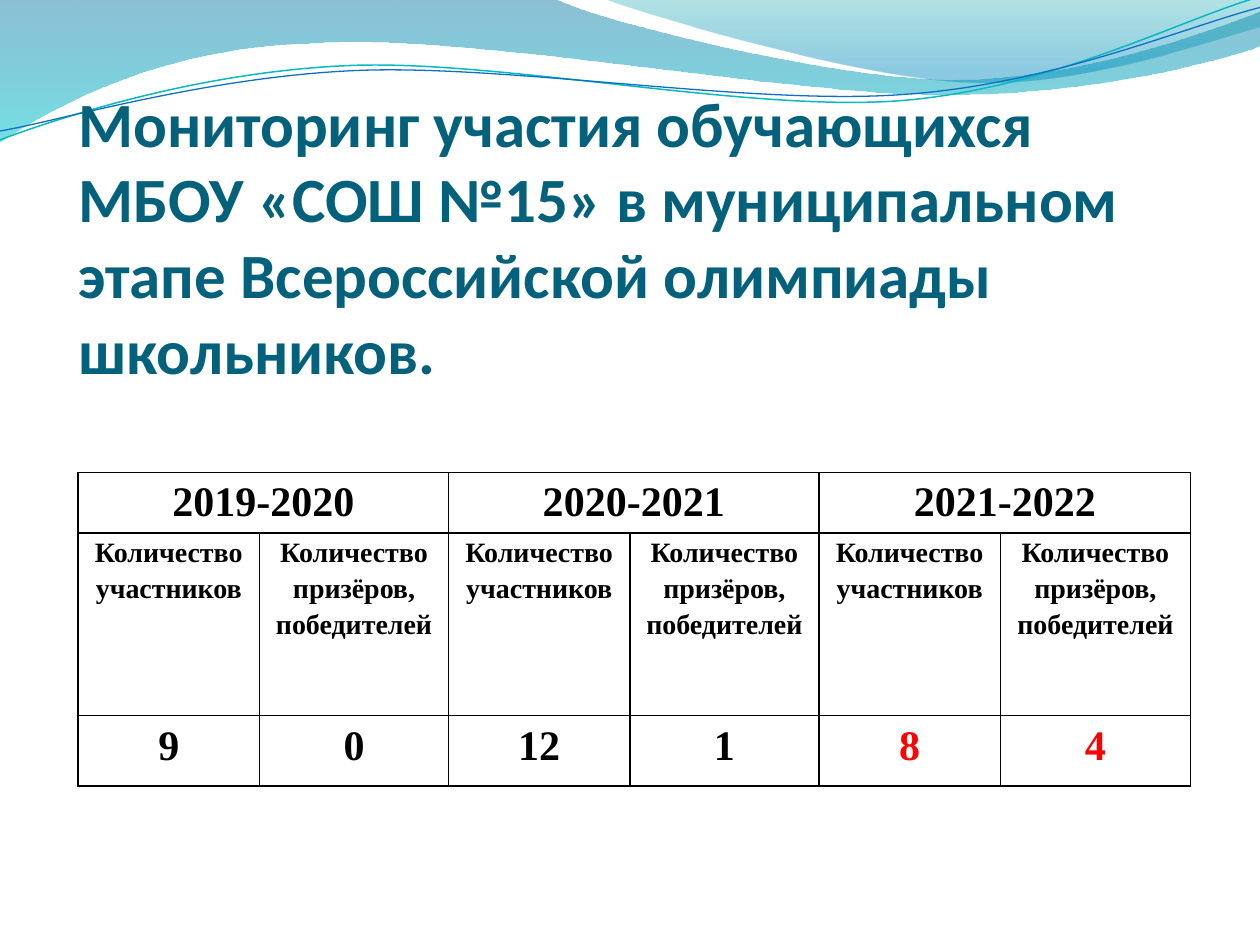
import math
import pptx
import pptx.util
import pptx.dml.color
import pptx.enum.text
import pptx.oxml.ns
import lxml.etree

Inches = pptx.util.Inches
qn = pptx.oxml.ns.qn
ALIGN = pptx.enum.text.PP_ALIGN
ANCHOR = pptx.enum.text.MSO_ANCHOR

COLORS = {"title": "04617B", "ink": "000000", "hot": "FF0000",
          "deep": "0074A1", "aqua": "00C6CF", "sea": "00A1A9",
          "sky": "008BBF", "teal": "0AB8BF", "blue": "0F6FC6"}
TITLE = ("Мониторинг участия обучающихся МБОУ «СОШ №15» в муниципальном "
         "этапе Всероссийской олимпиады школьников.")
HEADS = ("Количество участников", "Количество призёров, победителей")
YEARS = [("2019-2020", ("9", "0"), "ink"),
         ("2020-2021", ("12", "1"), "ink"),
         ("2021-2022", ("8", "4"), "hot")]
COLS = (1.44, 1.5, 1.44, 1.5, 1.44, 1.51)
ROWS = (0.48, 1.45, 0.56)
TILT = -2.7
BANDS = [
    {"path": [(0, 0), (4.4, -0.01),
              (4.76, 0.17, 6.64, 0.63, 7.58, 0.63),
              (8.53, 0.63, 9.58, 0.26, 10, 0.09), (10.01, 0.36),
              (9.83, 0.44, 8.7, 0.76, 7.46, 0.75),
              (6.22, 0.75, 3.82, 0.28, 2.57, 0.34),
              (1.29, 0.36, 0.46, 0.83, -0.01, 1.13), (0, 0)],
     "stops": [(0, "deep", 45), (1, "aqua", 55)]},
    {"path": [(4.79, -0.01),
              (5.09, 0.11, 6.82, 0.62, 7.69, 0.65),
              (8.56, 0.69, 9.61, 0.32, 10, 0.21), (10, 0), (4.79, -0.01)],
     "stops": [(0, "sea", 30), (0.8, "sky", 45)]},
]
WAVES = [
    {"path": [(0, 1.11), (0.48, 0.93, 1.58, 0.57, 2.77, 0.52),
              (3.95, 0.47, 5.93, 0.89, 7.13, 0.8),
              (8.33, 0.71, 9.38, 0.15, 9.98, -0.02)],
     "mid": (4.99, 0.58), "color": "teal", "width": 0.85},
    {"path": [(0, 1.04), (0.47, 0.96, 1.64, 0.61, 2.83, 0.56),
              (4.03, 0.51, 5.97, 0.84, 7.17, 0.75),
              (8.36, 0.67, 9.41, 0.21, 10, 0.06)],
     "mid": (5, 0.59), "color": "blue", "width": 0.75},
]


def shade(name):
    return pptx.dml.color.RGBColor.from_string(COLORS[name])


def write(frame, text, size, font="Times New Roman", color="ink",
          align=ALIGN.CENTER, space=1.15):
    para = frame.paragraphs[0]
    para.alignment = align
    para.line_spacing = space
    run = para.add_run()
    run.text = text
    run.font.size = pptx.util.Pt(size)
    run.font.name = font
    run.font.bold = True
    run.font.color.rgb = shade(color)


def turn(part, mid, angle):
    cos, sin = math.cos(math.radians(angle)), math.sin(math.radians(angle))
    out = []
    for x, y in zip(part[::2], part[1::2]):
        dx, dy = x - mid[0], y - mid[1]
        out += [mid[0] + dx * cos - dy * sin, mid[1] + dx * sin + dy * cos]
    return out


def draw(shapes, path, close):
    first, *rest = [(Inches(x), Inches(y)) for part in path
                    for x, y in zip(part[::2], part[1::2])]
    pen = shapes.build_freeform(*first)
    pen.add_line_segments(rest, close=close)
    shape = pen.convert_to_shape()
    shape.shadow.inherit = False
    lines = iter(list(shape.element.iter(qn("a:lnTo"))))
    for part in path[1:]:
        line = next(lines)
        if len(part) == 6:
            curve = lxml.etree.Element(qn("a:cubicBezTo"))
            line.addprevious(curve)
            for node in (line, next(lines), next(lines)):
                curve.append(node[0])
                node.getparent().remove(node)
    return shape


def band(shapes, path, stops):
    shape = draw(shapes, path, True)
    shape.line.fill.background()
    shape.fill.gradient()
    shape.fill.gradient_angle = 270
    for stop, (place, color, alpha) in zip(shape.fill.gradient_stops, stops):
        stop.position = place
        stop.color.rgb = shade(color)
    grad = shape.element.spPr.find(qn("a:gradFill"))
    for node, (place, color, alpha) in zip(grad.iter(qn("a:srgbClr")), stops):
        lxml.etree.SubElement(node, qn("a:alpha"), val=str(alpha * 1000))


def wave(shapes, path, mid, color, width):
    shape = draw(shapes, [turn(part, mid, -TILT) for part in path], False)
    shape.rotation = TILT
    shape.fill.background()
    shape.line.color.rgb = shade(color)
    shape.line.width = pptx.util.Pt(width)


def frame(cell):
    cell.margin_left = cell.margin_right = Inches(0.07)
    cell.margin_top = cell.margin_bottom = 0
    props = cell._tc.get_or_add_tcPr()
    for side in ("lnL", "lnR", "lnT", "lnB"):
        line = lxml.etree.SubElement(props, qn("a:" + side), w="12700")
        fill = lxml.etree.SubElement(line, qn("a:solidFill"))
        lxml.etree.SubElement(fill, qn("a:srgbClr"), val=COLORS["ink"])
    cell.fill.background()


def head(slide):
    title = slide.shapes.title
    title.left, title.top = Inches(0.62), Inches(2.42)
    title.width, title.height = Inches(9), Inches(1.25)
    box = title.text_frame
    box.word_wrap = True
    box.auto_size = pptx.enum.text.MSO_AUTO_SIZE.NONE
    box.vertical_anchor = ANCHOR.BOTTOM
    box.margin_left = box.margin_right = 0
    box.margin_top, box.margin_bottom = Inches(0.05), Inches(0.6)
    write(box, TITLE, 36, font="Calibri", color="title",
          align=ALIGN.LEFT, space=1.0)
    title.element.getparent().append(title.element)


def grid(shapes):
    table = shapes.add_table(len(ROWS), len(COLS), Inches(0.62), Inches(3.75),
                             Inches(sum(COLS)), Inches(sum(ROWS))).table
    table.first_row = table.horz_banding = False
    for col, width in zip(table.columns, COLS):
        col.width = Inches(width)
    for row, height in zip(table.rows, ROWS):
        row.height = Inches(height)
    for cell in table.iter_cells():
        frame(cell)
    for i, (year, counts, color) in enumerate(YEARS):
        left = 2 * i
        table.cell(0, left).merge(table.cell(0, left + 1))
        write(table.cell(0, left).text_frame, year, 24)
        for j, (name, count) in enumerate(zip(HEADS, counts)):
            write(table.cell(1, left + j).text_frame, name, 16)
            write(table.cell(2, left + j).text_frame, count, 24, color=color)


def main():
    deck = pptx.Presentation()
    deck.slide_width, deck.slide_height = Inches(10), Inches(7.5)
    slide = deck.slides.add_slide(deck.slide_layouts[5])
    for item in BANDS:
        band(slide.shapes, **item)
    for item in WAVES:
        wave(slide.shapes, **item)
    head(slide)
    grid(slide.shapes)
    deck.save("out.pptx")


if __name__ == "__main__":
    main()
